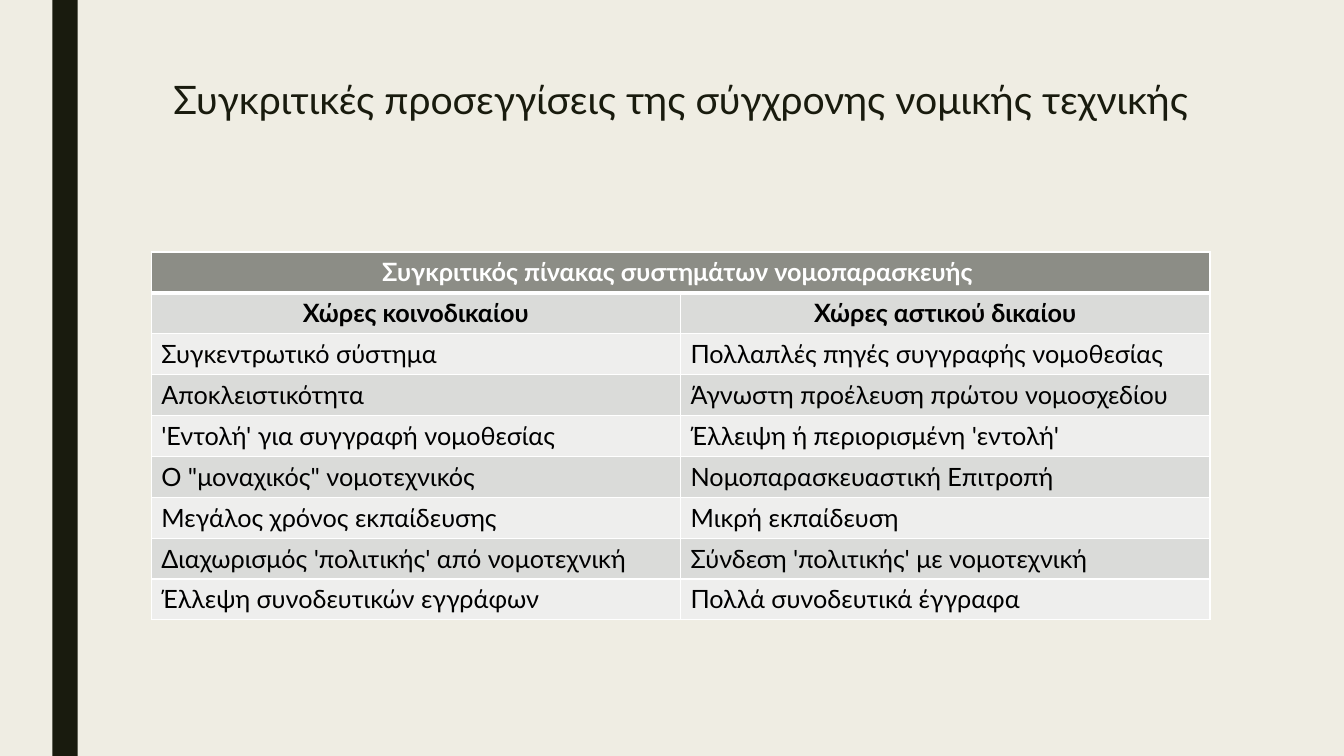
from lxml import etree
from pptx import Presentation, util as u
from pptx.dml.color import RGBColor
from pptx.enum import shapes, text
from pptx.oxml import ns

COLORS = {
    "background": "EFEDE3",
    "dark": "191B0E",
    "header": "8C8D86",
    "band_dark": "DADBD9",
    "band_light": "EEEEED",
    "white": "FFFFFF",
    "black": "000000",
}
FONT = "Lato"
TABLE_TITLE = "Συγκριτικός πίνακας συστημάτων νομοπαρασκευής "
ROWS = [
    (TABLE_TITLE, ""),
    ("Χώρες κοινοδικαίου", "Χώρες αστικού δικαίου"),
    ("Συγκεντρωτικό σύστημα", "Πολλαπλές πηγές συγγραφής νομοθεσίας"),
    ("Αποκλειστικότητα", "Άγνωστη προέλευση πρώτου νομοσχεδίου"),
    ("'Εντολή' για συγγραφή νομοθεσίας", "Έλλειψη ή περιορισμένη 'εντολή'"),
    ("Ο \"μοναχικός\" νομοτεχνικός", "Νομοπαρασκευαστική Επιτροπή"),
    ("Μεγάλος χρόνος εκπαίδευσης", "Μικρή εκπαίδευση"),
    ("Διαχωρισμός 'πολιτικής' από νομοτεχνική", "Σύνδεση 'πολιτικής' με νομοτεχνική"),
    ("Έλλεψη συνοδευτικών εγγράφων", "Πολλά συνοδευτικά έγγραφα"),
]


def style_text(paragraph, size, color, bold, centered):
    paragraph.alignment = text.PP_ALIGN.CENTER if centered else text.PP_ALIGN.LEFT
    for run in paragraph.runs:
        run.font.name = FONT
        run.font.size = u.Pt(size)
        run.font.bold = bold
        run.font.color.rgb = RGBColor.from_string(COLORS[color])


def set_borders(cell, widths):
    properties = cell._tc.get_or_add_tcPr()
    for position, (side, width) in enumerate(widths.items()):
        line = etree.Element(ns.qn(f"a:ln{side}"), w=str(u.Pt(width)))
        fill = etree.SubElement(line, ns.qn("a:solidFill"))
        etree.SubElement(fill, ns.qn("a:srgbClr"), val=COLORS["white"])
        properties.insert(position, line)


presentation = Presentation()
presentation.slide_width = u.Inches(13.33)
presentation.slide_height = u.Inches(7.5)
slide = presentation.slides.add_slide(presentation.slide_layouts[6])

# Background and side bar
slide.background.fill.solid()
slide.background.fill.fore_color.rgb = RGBColor.from_string(COLORS["background"])
bar = slide.shapes.add_shape(
    shapes.MSO_SHAPE.RECTANGLE, u.Inches(0.52), 0, u.Inches(0.25), presentation.slide_height
)
bar.shadow.inherit = False
bar.fill.solid()
bar.fill.fore_color.rgb = RGBColor.from_string(COLORS["dark"])
bar.line.fill.background()

# Title, aligned with the table
left, width = u.Inches(1.5), u.Inches(10.5)
title = slide.shapes.add_textbox(left, u.Inches(0.75), width, u.Inches(1.62))
title.text_frame.word_wrap = True
title.text_frame.vertical_anchor = text.MSO_ANCHOR.TOP
title.text_frame.text = "Συγκριτικές προσεγγίσεις της σύγχρονης νομικής τεχνικής"
paragraph = title.text_frame.paragraphs[0]
paragraph.line_spacing = 0.89
style_text(paragraph, 28, "dark", False, True)

# Comparison table
table = slide.shapes.add_table(len(ROWS), 2, left, u.Inches(2.5), width, u.Inches(3.65)).table
table.cell(0, 0).merge(table.cell(0, 1))
for row, values in enumerate(ROWS):
    if row == 0:
        fill = "header"
    else:
        fill = "band_dark" if row % 2 else "band_light"
    for column, value in enumerate(values):
        cell = table.cell(row, column)
        cell.text_frame.text = value
        style_text(
            cell.text_frame.paragraphs[0], 18, "black" if row else "white", row < 2, row < 2
        )
        cell.fill.solid()
        cell.fill.fore_color.rgb = RGBColor.from_string(COLORS[fill])
        # A thicker rule separates the table title from the body
        set_borders(cell, {"L": 1, "R": 1, "T": 3 if row == 1 else 1, "B": 1 if row else 3})

presentation.save("out.pptx")
